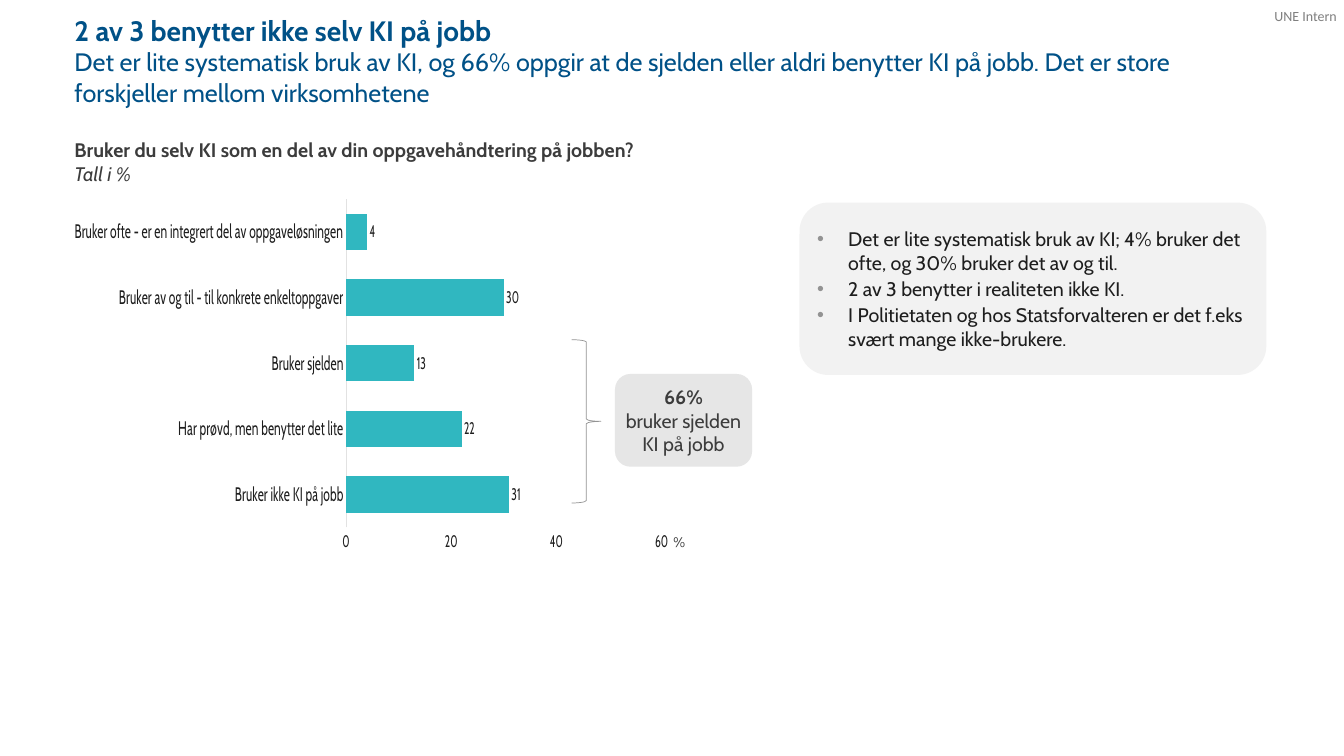
from lxml.etree import SubElement
from pptx import Presentation
from pptx.chart.data import CategoryChartData
from pptx.dml.color import RGBColor
from pptx.enum.chart import XL_CHART_TYPE, XL_LABEL_POSITION, XL_TICK_MARK
from pptx.enum.shapes import MSO_SHAPE
from pptx.enum.text import MSO_ANCHOR, PP_ALIGN
from pptx.oxml import parse_xml
from pptx.oxml.ns import nsdecls, qn
from pptx.util import Inches, Pt

COLORS = {
    "title": "005187", "text": "3C3C3C", "dark": "1E1E1E", "muted": "7F7F7F",
    "bar": "30B7C0", "axis": "E2E2E2", "line": "939393",
    "callout": "E6E6E6", "panel": "F2F2F2",
}
FONT = "Cabin"
USAGE = [
    ("Bruker ikke KI på jobb", 31),
    ("Har prøvd, men benytter det lite", 22),
    ("Bruker sjelden", 13),
    ("Bruker av og til - til konkrete enkeltoppgaver", 30),
    ("Bruker ofte - er en integrert del av oppgaveløsningen", 4),
]
FINDINGS = [
    "Det er lite systematisk bruk av KI; 4% bruker det ofte, og 30% bruker det av og til.",
    "2 av 3 benytter i realiteten ikke KI.",
    "I Politietaten og hos Statsforvalteren er det f.eks svært mange ikke-brukere.",
]


def color(name):
    return RGBColor.from_string(COLORS[name])


def set_font(font, size, color_name, name=FONT, bold=False, italic=False):
    font.name, font.size = name, Pt(size)
    font.bold, font.italic = bold, italic
    font.color.rgb = color(color_name)


def write(frame, text, first=False, align=PP_ALIGN.LEFT, bullet=False, **font_format):
    """Add one formatted paragraph to a text frame."""
    paragraph = frame.paragraphs[0] if first else frame.add_paragraph()
    paragraph.alignment = align
    if bullet:
        properties = paragraph._p.get_or_add_pPr()
        properties.set("marL", str(Inches(0.4)))
        properties.set("indent", str(-Inches(0.31)))
        if not first:
            paragraph.space_before = Pt(2)
        bullet_color = SubElement(properties, qn("a:buClr"))
        SubElement(bullet_color, qn("a:srgbClr")).set("val", COLORS["line"])
        SubElement(properties, qn("a:buFont")).set("typeface", "Arial")
        SubElement(properties, qn("a:buChar")).set("char", "•")
    run = paragraph.add_run()
    run.text = text
    set_font(run.font, **font_format)


def set_margins(frame, margin):
    frame.margin_left = frame.margin_right = Inches(margin)
    frame.margin_top = frame.margin_bottom = Inches(margin)


def add_text(slide, box, wrap=True):
    frame = slide.shapes.add_textbox(*map(Inches, box)).text_frame
    frame.word_wrap = wrap
    return frame


def add_panel(slide, box, fill):
    """Rounded panel without outline; returns its text frame."""
    shape = slide.shapes.add_shape(MSO_SHAPE.ROUNDED_RECTANGLE, *map(Inches, box))
    shape.shadow.inherit = False
    shape.fill.solid()
    shape.fill.fore_color.rgb = color(fill)
    shape.line.fill.background()
    frame = shape.text_frame
    frame.word_wrap = True
    frame.vertical_anchor = MSO_ANCHOR.MIDDLE
    set_margins(frame, 0)
    return frame


def add_heading(slide, left, top):
    # Classification mark in the corner
    mark = add_text(slide, (left + 12, top - 0.01, 0.65, 0.17), wrap=False)
    set_margins(mark, 0)
    write(mark, "UNE Intern", first=True, size=10, color_name="muted", name="Calibri")

    # Title and key message
    title = add_text(slide, (left, top, 11.95, 0.68))
    write(title, "2 av 3 benytter ikke selv KI på jobb", first=True,
          size=20, color_name="title", bold=True)
    write(title, "Det er lite systematisk bruk av KI, og 66% oppgir at de sjelden eller aldri "
          "benytter KI på jobb. Det er store forskjeller mellom virksomhetene",
          size=18, color_name="title")

    # Survey question
    question = add_text(slide, (left, top + 1.24, 5.77, 0.57), wrap=False)
    write(question, "Bruker du selv KI som en del av din oppgavehåndtering på jobben?",
          first=True, size=14, color_name="text", bold=True)
    write(question, "Tall i %", size=14, color_name="text", italic=True)


def set_plot_layout(chart, x, y, w, h):
    area = chart._chartSpace.chart.plotArea
    for layout in area.findall(qn("c:layout")):
        area.remove(layout)
    area.insert(0, parse_xml(
        f'<c:layout {nsdecls("c")}><c:manualLayout><c:layoutTarget val="inner"/>'
        '<c:xMode val="edge"/><c:yMode val="edge"/>'
        f'<c:x val="{x}"/><c:y val="{y}"/><c:w val="{w}"/><c:h val="{h}"/>'
        '</c:manualLayout></c:layout>'))


def add_usage_chart(slide, left, top, width, height):
    data = CategoryChartData()
    data.categories = [label for label, _ in USAGE]
    data.add_series("Series 1", [value for _, value in USAGE])
    chart = slide.shapes.add_chart(
        XL_CHART_TYPE.BAR_CLUSTERED, *map(Inches, (left, top, width, height)), data).chart
    chart.has_legend = chart.has_title = False
    set_font(chart.font, 10, "dark")
    set_plot_layout(chart, 0.1, 0.01, 0.87, 0.91)

    # Axes
    for axis, size in ((chart.category_axis, 14), (chart.value_axis, 12)):
        axis.has_major_gridlines = False
        axis.major_tick_mark = axis.minor_tick_mark = XL_TICK_MARK.NONE
        set_font(axis.tick_labels.font, size, "dark")
    chart.category_axis.format.line.color.rgb = color("axis")
    chart.category_axis.format.line.width = Pt(0.75)
    value_axis = chart.value_axis
    value_axis.minimum_scale, value_axis.maximum_scale, value_axis.major_unit = 0, 60, 20
    value_axis.format.line.fill.background()

    # Bars and value labels
    plot = chart.plots[0]
    plot.gap_width = 80
    plot.vary_by_categories = False
    fill = plot.series[0].format.fill
    fill.solid()
    fill.fore_color.rgb = color("bar")
    plot.has_data_labels = True
    labels = plot.data_labels
    labels.show_value = True
    labels.position = XL_LABEL_POSITION.OUTSIDE_END
    set_font(labels.font, 12, "dark")

    # Unit beside the value axis
    unit = add_text(slide, (left + width - 0.09, top + height - 0.28, 0.3, 0.27), wrap=False)
    write(unit, "%", first=True, size=10, color_name="text")


def add_summary(slide, left, top):
    # Brace around the three lowest bars
    brace = slide.shapes.add_shape(
        MSO_SHAPE.RIGHT_BRACE, *map(Inches, (left, top, 0.29, 1.62)))
    brace.shadow.inherit = False
    brace.fill.background()
    brace.line.color.rgb = color("line")
    brace.line.width = Pt(0.5)

    # Callout
    callout = add_panel(slide, (left + 0.43, top + 0.34, 1.36, 0.92), "callout")
    write(callout, "66%", first=True, align=PP_ALIGN.CENTER,
          size=14, color_name="text", bold=True)
    write(callout, "bruker sjelden KI på jobb", align=PP_ALIGN.CENTER,
          size=14, color_name="text")


def add_findings(slide, box):
    panel = add_panel(slide, box, "panel")
    # The rounded corners already inset the text horizontally
    for index, finding in enumerate(FINDINGS):
        write(panel, finding, first=index == 0, bullet=True, size=14, color_name="dark")


def main():
    presentation = Presentation()
    presentation.slide_width, presentation.slide_height = Inches(13.33), Inches(7.5)
    slide = presentation.slides.add_slide(presentation.slide_layouts[6])
    add_heading(slide, 0.64, 0.08)
    add_usage_chart(slide, 0.74, 1.94, 5.93, 3.58)
    add_summary(slide, 5.67, 3.37)
    add_findings(slide, (7.93, 2.01, 4.63, 1.71))
    presentation.save("out.pptx")


if __name__ == "__main__":
    main()
